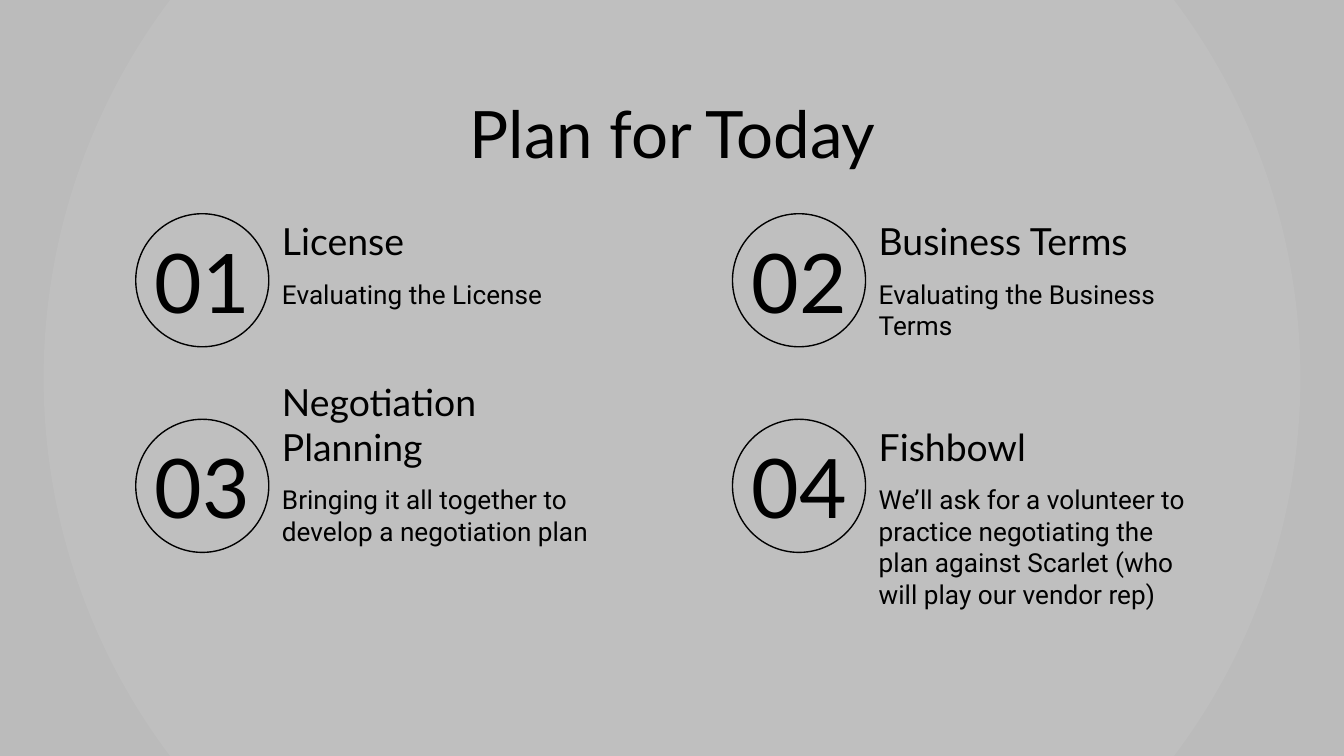
from lxml.etree import SubElement
from pptx import Presentation
from pptx.dml.color import RGBColor
from pptx.enum.shapes import MSO_SHAPE
from pptx.enum.text import MSO_ANCHOR, PP_ALIGN
from pptx.oxml.ns import qn
from pptx.util import Inches, Pt

BLACK = RGBColor(0x00, 0x00, 0x00)
GRAY = RGBColor(0xBF, 0xBF, 0xBF)
DARK_GRAY = RGBColor(0xBB, 0xBB, 0xBB)

TOPICS = [
    ("License", "Evaluating the License"),
    ("Business Terms", "Evaluating the Business Terms"),
    ("Negotiation Planning", "Bringing it all together to develop a negotiation plan"),
    ("Fishbowl", "We’ll ask for a volunteer to practice negotiating the plan "
                 "against Scarlet (who will play our vendor rep)"),
]


def set_background(s):
    s.background.fill.gradient()
    grad = s.element.find(".//" + qn("a:gradFill"))
    for child in list(grad):
        grad.remove(child)
    stops = SubElement(grad, qn("a:gsLst"))
    for pos, color in ((0, GRAY), (63, GRAY), (100, DARK_GRAY)):
        stop = SubElement(stops, qn("a:gs"), pos=str(pos * 1000))
        SubElement(stop, qn("a:srgbClr"), val=str(color))
    circle = SubElement(grad, qn("a:path"), path="circle")
    SubElement(circle, qn("a:fillToRect"), l="50000", t="50000", r="50000", b="50000")


def add_text(s, box, text, size, font="Lato", align=PP_ALIGN.LEFT, anchor=MSO_ANCHOR.TOP):
    tf = s.shapes.add_textbox(*map(Inches, box)).text_frame
    tf.word_wrap = True
    tf.vertical_anchor = anchor
    tf.margin_left = tf.margin_right = tf.margin_top = tf.margin_bottom = Inches(0.1)
    p = tf.paragraphs[0]
    p.text = text
    p.alignment = align
    p.font.name = font
    p.font.size = Pt(size)
    p.font.color.rgb = BLACK


def add_topic(s, x, y, w, number, heading, detail):
    d = 0.99
    circle = s.shapes.add_shape(
        MSO_SHAPE.OVAL, Inches(x), Inches(y + 0.02), Inches(d), Inches(d))
    circle.shadow.inherit = False
    circle.fill.background()
    circle.line.color.rgb = BLACK
    circle.line.width = Pt(0.75)
    add_text(s, (x, y + 0.16, d, 0.71), f"{number:02}", 44,
             align=PP_ALIGN.CENTER, anchor=MSO_ANCHOR.MIDDLE)
    add_text(s, (x + d, y, w - d, 0.49), heading, 20, anchor=MSO_ANCHOR.BOTTOM)
    add_text(s, (x + d, y + 0.4, w - d, 0.63), detail, 14, font="Roboto")


def add_topic_grid(s, x, y, col_step, row_step):
    for i, (heading, detail) in enumerate(TOPICS):
        row, col = divmod(i, 2)
        add_topic(s, x + col * col_step, y + row * row_step, 3.53, i + 1, heading, detail)


def main():
    prs = Presentation()
    prs.slide_width = Inches(10)
    prs.slide_height = prs.slide_width * 9 // 16
    s = prs.slides.add_slide(prs.slide_layouts[6])
    set_background(s)
    add_text(s, (0.79, 0.59, 8.43, 0.63), "Plan for Today", 35, align=PP_ALIGN.CENTER)
    add_topic_grid(s, 1.01, 1.57, 4.44, 1.53)
    prs.save("out.pptx")


if __name__ == "__main__":
    main()
